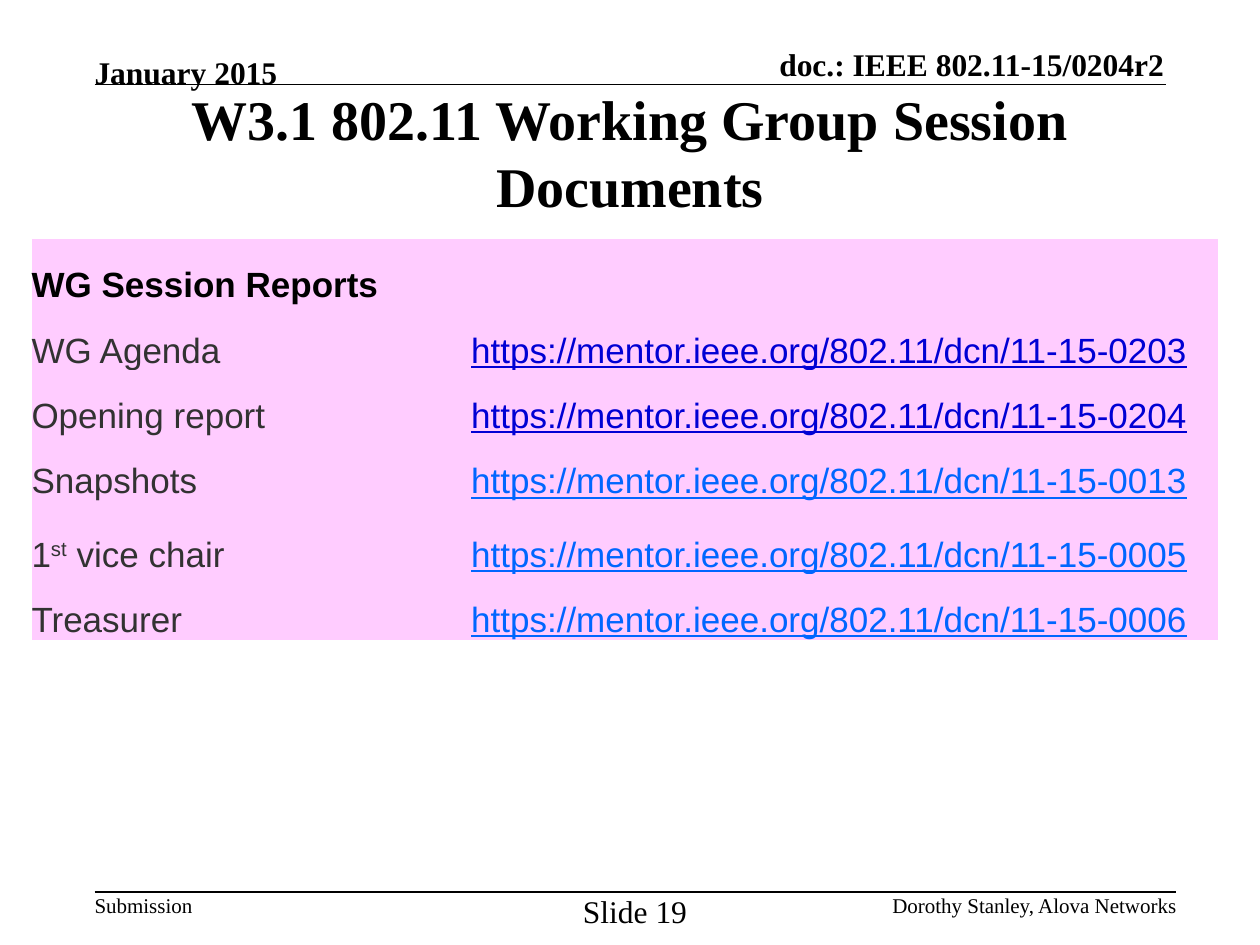
from pptx import Presentation
from pptx.dml.color import RGBColor
from pptx.enum.shapes import MSO_CONNECTOR
from pptx.enum.text import MSO_ANCHOR, MSO_AUTO_SIZE, PP_ALIGN
from pptx.oxml.ns import qn
from pptx.util import Inches, Pt
from lxml.etree import SubElement

BLACK = RGBColor(0x00, 0x00, 0x00)
GREY = RGBColor(0x32, 0x32, 0x32)
PINK = RGBColor(0xFF, 0xCC, 0xFF)
DARK_BLUE = RGBColor(0x00, 0x00, 0xD4)
BLUE = RGBColor(0x00, 0x66, 0xFF)
SERIF, SANS = "Times New Roman", "Arial"
PLAIN_TABLE = "{2D5ABB26-0587-4C30-8999-92F81FD0307C}"

MARGIN = 0.75
FOOTER_TOP = 7.08
LINK_BASE = "https://mentor.ieee.org/802.11/dcn/11-15-"
REPORTS = [
    ("WG Agenda", "0203", DARK_BLUE),
    ("Opening report", "0204", DARK_BLUE),
    ("Snapshots", "0013", BLUE),
    ("1st vice chair", "0005", BLUE),
    ("Treasurer", "0006", BLUE),
]


def inches(*lengths):
    return [Inches(length) for length in lengths]


def style(p, name, size, color=BLACK, bold=False, underline=False):
    font = p.font
    font.name, font.size = name, Pt(size)
    font.bold, font.underline = bold, underline
    font.color.rgb = color


def add_label(slide, box, text, size, align=PP_ALIGN.LEFT, bold=False,
              anchor=MSO_ANCHOR.TOP, wrap=False):
    tf = slide.shapes.add_textbox(*inches(*box)).text_frame
    tf.margin_left = tf.margin_right = tf.margin_top = tf.margin_bottom = 0
    tf.word_wrap, tf.vertical_anchor = wrap, anchor
    p = tf.paragraphs[0]
    p.text, p.alignment = text, align
    style(p, SERIF, size, bold=bold)


def add_rule(slide, left, right, y):
    line = slide.shapes.add_connector(
        MSO_CONNECTOR.STRAIGHT, *inches(left, y, right, y))
    line.line.color.rgb = BLACK
    line.line.width = Pt(1)
    SubElement(line._element.spPr, qn("a:effectLst"))


def add_header(slide, left, right):
    add_label(slide, (right - 3.6, 0.36, 3.59, 0.3), "doc.: IEEE 802.11-15/0204r2",
              18, PP_ALIGN.RIGHT, True, MSO_ANCHOR.BOTTOM)
    add_label(slide, (left, 0.42, 1.92, 0.3), "January 2015",
              18, bold=True, anchor=MSO_ANCHOR.BOTTOM, wrap=True)
    add_rule(slide, left, right, 0.67)


def add_footer(slide, left, right, top):
    add_rule(slide, left, right, top)
    add_label(slide, (left, top, 0.78, 0.2), "Submission", 12)
    add_label(slide, ((left + right) / 2 - 0.5, top, 1, 0.3), "Slide 19",
              18, PP_ALIGN.CENTER)
    add_label(slide, (right - 3.75, top, 3.76, 0.2),
              "Dorothy Stanley, Alova Networks", 12, PP_ALIGN.RIGHT)


def set_title(slide, box, text):
    title = slide.shapes.title
    title.left, title.top, title.width, title.height = inches(*box)
    tf = title.text_frame
    tf.word_wrap, tf.auto_size = True, MSO_AUTO_SIZE.NONE
    tf.vertical_anchor = MSO_ANCHOR.MIDDLE
    p = tf.paragraphs[0]
    p.text, p.alignment = text, PP_ALIGN.CENTER
    style(p, SERIF, 32, bold=True)


def fill_label(p, text):
    """Write text, raising the ordinal ending of a leading "1st"."""
    if not text.startswith("1st"):
        p.text = text
        return
    for part in ("1", "st", text[3:]):
        r = p.add_run()
        r.text = part
        if part == "st":
            r.font._element.set("baseline", "30000")


def add_report_table(slide, left, top, columns, rows):
    frame = slide.shapes.add_table(
        len(rows), len(columns), *inches(left, top, sum(columns), sum(rows)))
    table = frame.table
    table.first_row = table.horz_banding = False
    table._tbl.tblPr.find(qn("a:tableStyleId")).text = PLAIN_TABLE
    for column, width in zip(table.columns, columns):
        column.width = Inches(width)
    for row, height in zip(table.rows, rows):
        row.height = Inches(height)
    for cell in table.iter_cells():
        cell.fill.solid()
        cell.fill.fore_color.rgb = PINK
        cell.margin_left = cell.margin_right = cell.margin_top = cell.margin_bottom = 0
        cell.vertical_anchor = MSO_ANCHOR.BOTTOM

    heading = table.cell(0, 0).text_frame.paragraphs[0]
    heading.text = "WG Session Reports"
    style(heading, SANS, 20, bold=True)
    for i, (label, number, color) in enumerate(REPORTS, start=1):
        name, link = (table.cell(i, j).text_frame.paragraphs[0] for j in (0, 1))
        fill_label(name, label)
        style(name, SANS, 20, GREY)
        link.text = LINK_BASE + number
        style(link, SANS, 20, color, underline=True)


def main():
    prs = Presentation()
    prs.slide_width, prs.slide_height = inches(10, 7.5)
    slide = prs.slides.add_slide(prs.slide_layouts[5])
    add_header(slide, MARGIN, 10 - MARGIN)
    set_title(slide, (MARGIN, 0.83, 10 - 2 * MARGIN, 0.75),
              "W3.1 802.11 Working Group Session Documents")
    add_report_table(slide, 0.25, 1.9, (3.49, 5.93), [0.52] * 4 + [0.58, 0.52])
    add_footer(slide, MARGIN, 9.33, FOOTER_TOP)
    prs.save("out.pptx")


if __name__ == "__main__":
    main()
